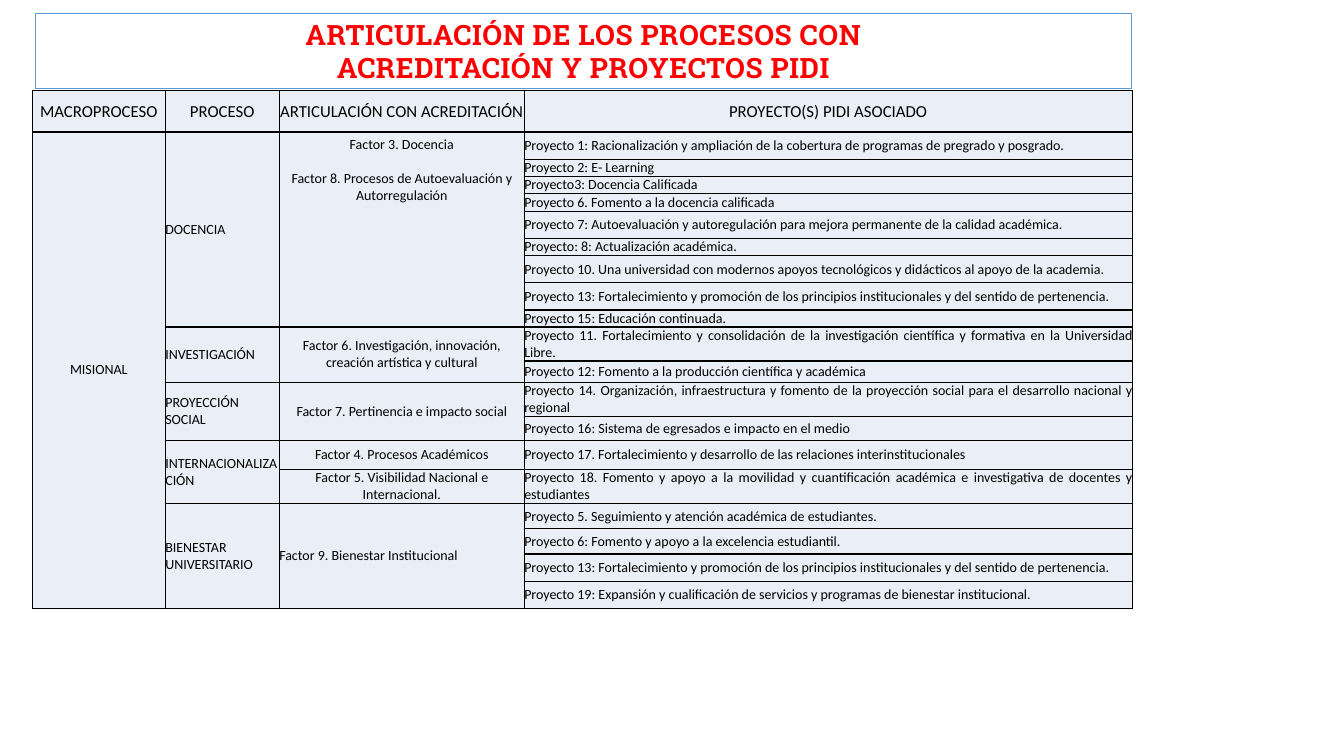
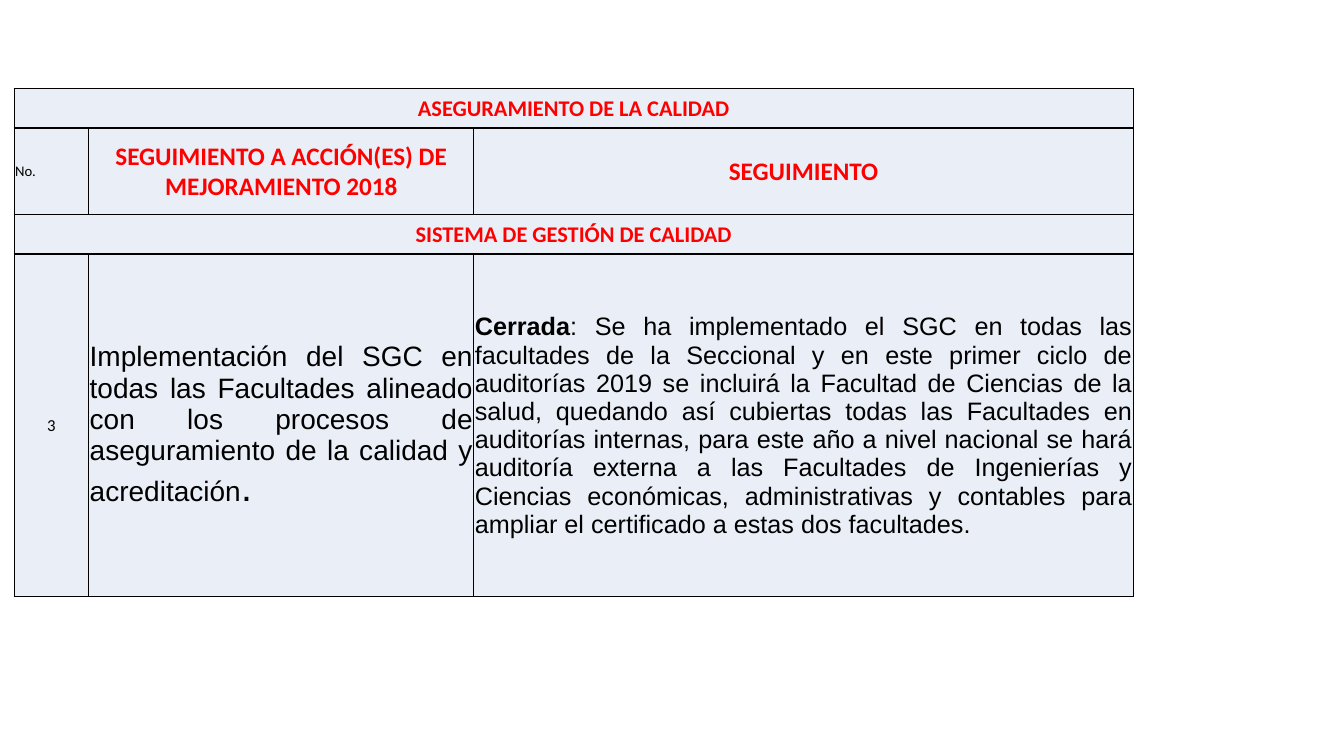
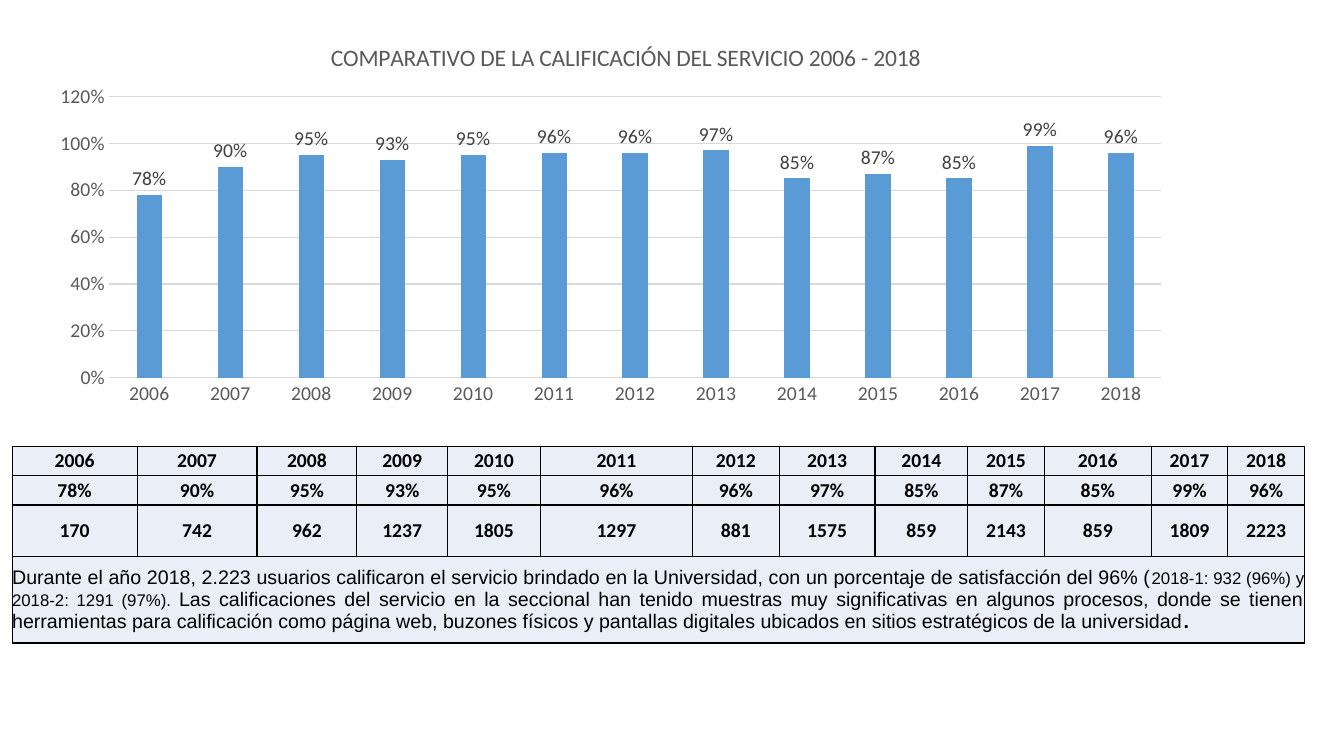
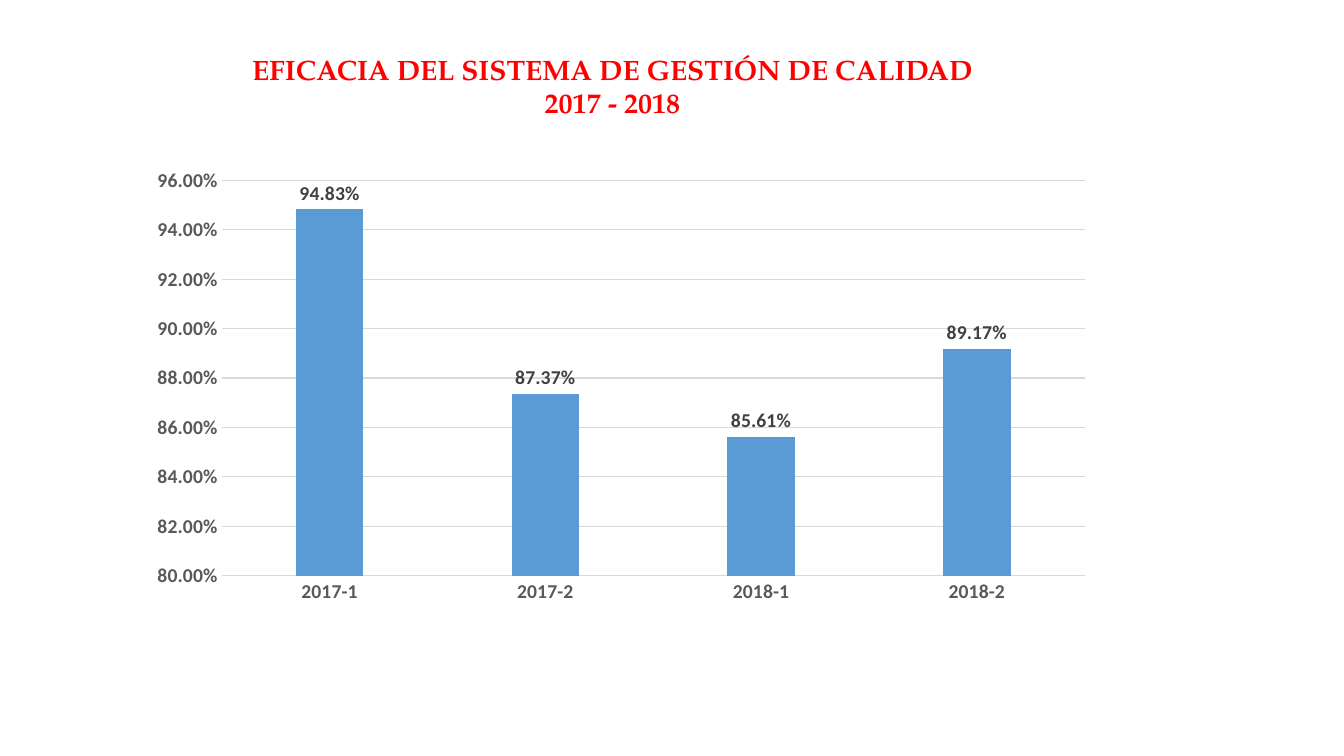
"""Build four slides on quality management: project tables and result charts."""
from lxml.etree import SubElement
from pptx import Presentation
from pptx.chart.data import CategoryChartData
from pptx.dml.color import RGBColor
from pptx.enum.chart import XL_CHART_TYPE, XL_LABEL_POSITION, XL_TICK_MARK
from pptx.enum.shapes import MSO_SHAPE
from pptx.enum.text import MSO_ANCHOR, PP_ALIGN
from pptx.oxml.ns import qn
from pptx.util import Inches, Pt

RED = RGBColor(0xFF, 0x00, 0x00)
BLACK = RGBColor(0x00, 0x00, 0x00)
BLUE = RGBColor(0x5B, 0x9B, 0xD5)
CELL_BLUE = RGBColor(0xEA, 0xEF, 0xF7)
GRID_GREY = RGBColor(0xD9, 0xD9, 0xD9)
AXIS_GREY = RGBColor(0x59, 0x59, 0x59)
LABEL_GREY = RGBColor(0x40, 0x40, 0x40)

LEFT, CENTER, JUSTIFY = PP_ALIGN.LEFT, PP_ALIGN.CENTER, PP_ALIGN.JUSTIFY
BODY_FONT = "Calibri"

PROCESS_TITLE = ["ARTICULACIÓN DE LOS PROCESOS CON", "ACREDITACIÓN Y PROYECTOS PIDI"]
PROCESS_HEADS = ["MACROPROCESO", "PROCESO", "ARTICULACIÓN CON ACREDITACIÓN", "PROYECTO(S) PIDI ASOCIADO"]
MACROPROCESS = "MISIONAL"
PROCESSES = [
    ("DOCENCIA", [
        (["Factor 3. Docencia", "Factor 8. Procesos de Autoevaluación y Autorregulación"], [
            "Proyecto 1: Racionalización y ampliación de la cobertura de programas de pregrado y posgrado.",
            "Proyecto 2: E- Learning",
            "Proyecto3: Docencia Calificada",
            "Proyecto 6. Fomento a la docencia calificada",
            "Proyecto 7: Autoevaluación y autoregulación para mejora permanente de la calidad académica.",
            "Proyecto: 8: Actualización académica.",
            "Proyecto 10. Una universidad con modernos apoyos tecnológicos y didácticos al apoyo de la academia.",
            "Proyecto 13: Fortalecimiento y promoción de los principios institucionales y del sentido de pertenencia.",
            "Proyecto 15: Educación continuada.",
        ]),
    ]),
    ("INVESTIGACIÓN", [
        (["Factor 6. Investigación, innovación, creación artística y cultural"], [
            "Proyecto 11. Fortalecimiento y consolidación de la investigación científica y formativa "
            "en la Universidad Libre.",
            "Proyecto 12: Fomento a la producción científica y académica",
        ]),
    ]),
    ("PROYECCIÓN SOCIAL", [
        (["Factor 7. Pertinencia e impacto social"], [
            "Proyecto 14. Organización, infraestructura y fomento de la proyección social "
            "para el desarrollo nacional y regional",
            "Proyecto 16: Sistema de egresados e impacto en el medio",
        ]),
    ]),
    ("INTERNACIONALIZACIÓN", [
        (["Factor 4. Procesos Académicos"], [
            "Proyecto 17. Fortalecimiento y desarrollo de las relaciones interinstitucionales",
        ]),
        (["Factor 5. Visibilidad Nacional e Internacional."], [
            "Proyecto 18. Fomento y apoyo a la movilidad y cuantificación académica e investigativa "
            "de docentes y estudiantes",
        ]),
    ]),
    ("BIENESTAR UNIVERSITARIO", [
        (["Factor 9. Bienestar Institucional"], [
            "Proyecto 5. Seguimiento y atención académica de estudiantes.",
            "Proyecto 6: Fomento y apoyo a la excelencia estudiantil.",
            "Proyecto 13: Fortalecimiento y promoción de los principios institucionales y del sentido de pertenencia.",
            "Proyecto 19: Expansión y cualificación de servicios y programas de bienestar institucional.",
        ]),
    ]),
]
PROCESS_COLS = [1.32, 1.13, 2.43, 6.03]
PROCESS_ROWS = [0.41, 0.27, 0.15, 0.15, 0.18, 0.27, 0.17, 0.27, 0.27, 0.16,
                0.27, 0.21, 0.29, 0.24, 0.29, 0.29, 0.25, 0.25, 0.27, 0.27]
LEFT_ALIGNED_FACTOR = "Factor 9. Bienestar Institucional"

FOLLOW_UP_BANDS = {0: "ASEGURAMIENTO DE LA CALIDAD", 2: "SISTEMA DE GESTIÓN DE CALIDAD"}
FOLLOW_UP_HEADS = ["SEGUIMIENTO A ACCIÓN(ES) DE MEJORAMIENTO 2018", "SEGUIMIENTO"]
ACTION = [
    ("Implementación del SGC en todas las Facultades alineado con los procesos de aseguramiento "
     "de la calidad y acreditación", {"size": 20, "font": "Arial"}),
    (".", {"size": 28, "font": "Arial"}),
]
ACTION_STATUS = [
    ("Cerrada", {"size": 18, "font": "Arial", "bold": True}),
    (": Se ha implementado el SGC en todas las facultades de la Seccional y en este primer ciclo de "
     "auditorías 2019 se incluirá la Facultad de Ciencias de la salud, quedando así cubiertas todas las "
     "Facultades en auditorías internas, para este año a nivel nacional se hará auditoría externa a las "
     "Facultades de Ingenierías y Ciencias económicas, administrativas y contables para ampliar el "
     "certificado a estas dos facultades.", {"size": 18, "font": "Arial"}),
]

SERVICE_TITLE = "COMPARATIVO DE LA CALIFICACIÓN DEL SERVICIO 2006 - 2018"
SERVICE_YEARS = [str(year) for year in range(2006, 2019)]
SERVICE_SCORES = [0.78, 0.9, 0.95, 0.93, 0.95, 0.96, 0.96, 0.97, 0.85, 0.87, 0.85, 0.99, 0.96]
SERVICE_USERS = [170, 742, 962, 1237, 1805, 1297, 881, 1575, 859, 2143, 859, 1809, 2223]
SERVICE_COLS = [1.24, 1.19, 0.99, 0.9, 0.92, 1.51, 0.86, 0.95, 0.92, 0.76, 1.06, 0.76, 0.76]
SERVICE_NOTE = [
    ("Durante el año 2018, 2.223 usuarios calificaron el servicio brindado en la Universidad, con un "
     "porcentaje de satisfacción del 96% (", {"size": 14, "font": "Arial"}),
    ("2018-1: 932 (96%) y 2018-2: 1291 (97%). ", {"size": 12, "font": "Arial"}),
    ("Las calificaciones del servicio en la seccional han tenido muestras muy significativas en algunos "
     "procesos, donde se tienen herramientas para calificación como página web, buzones físicos y pantallas "
     "digitales ubicados en sitios estratégicos de la universidad", {"size": 14, "font": "Arial"}),
    (".", {"size": 14, "font": "Arial", "bold": True}),
]

EFFICACY_TITLE = ["EFICACIA DEL SISTEMA DE GESTIÓN DE CALIDAD", "2017 - 2018"]
EFFICACY = {"2017-1": 0.9483, "2017-2": 0.8737, "2018-1": 0.8561, "2018-2": 0.8917}


def box(*lengths):
    return [Inches(length) for length in lengths]


def style_font(font, size, color=BLACK, bold=False, name=BODY_FONT):
    font.size, font.bold, font.name = Pt(size), bold, name
    font.color.rgb = color


def write_runs(paragraph, runs, align):
    paragraph.alignment = align
    for text, look in runs:
        run = paragraph.add_run()
        run.text = text
        style_font(run.font, look["size"], look.get("color", BLACK),
                   look.get("bold", False), look.get("font", BODY_FONT))


def write_lines(frame, lines, align=CENTER, gap=0, **look):
    for index, line in enumerate(lines):
        paragraph = frame.add_paragraph() if index else frame.paragraphs[0]
        if index and gap:
            paragraph.space_before = Pt(gap)
        write_runs(paragraph, [(line, look)], align)


def add_borders(cell):
    properties = cell._tc.get_or_add_tcPr()
    for side in ("a:lnL", "a:lnR", "a:lnT", "a:lnB"):
        border = SubElement(properties, qn(side), w=str(Pt(1)))
        fill = SubElement(border, qn("a:solidFill"))
        SubElement(fill, qn("a:srgbClr"), val=str(BLACK))


def add_grid(slide, left, top, cols, rows, margin=0):
    table = slide.shapes.add_table(len(rows), len(cols), *box(left, top, sum(cols), sum(rows))).table
    for column, width in zip(table.columns, cols):
        column.width = Inches(width)
    for row, height in zip(table.rows, rows):
        row.height = Inches(height)
    for cell in table.iter_cells():
        cell.margin_left = cell.margin_top = cell.margin_right = Inches(margin)
        cell.margin_bottom = 0
        cell.vertical_anchor = MSO_ANCHOR.MIDDLE
        add_borders(cell)
        cell.fill.solid()
        cell.fill.fore_color.rgb = CELL_BLUE
    return table


def span(table, row, col, height=1, width=1):
    cell = table.cell(row, col)
    if height * width > 1:
        cell.merge(table.cell(row + height - 1, col + width - 1))
    return cell


def place_in_chart(parent, index, inner=False, **fractions):
    layout = parent.find(qn("c:layout"))
    if layout is not None:
        parent.remove(layout)
    layout = parent.makeelement(qn("c:layout"))
    parent.insert(index, layout)
    manual = SubElement(layout, qn("c:manualLayout"))
    if inner:
        SubElement(manual, qn("c:layoutTarget"), val="inner")
    for mode in ("xMode", "yMode"):
        SubElement(manual, qn(f"c:{mode}"), val="edge")
    for name, fraction in fractions.items():
        SubElement(manual, qn(f"c:{name}"), val=str(fraction))


def add_columns(slide, area, categories, values, number_format, scale, bold=False):
    data = CategoryChartData(number_format=number_format)
    data.categories = categories
    data.add_series("Series 1", values)
    chart = slide.shapes.add_chart(XL_CHART_TYPE.COLUMN_CLUSTERED, *box(*area), data).chart
    style_font(chart.font, 14, bold=bold)
    chart.has_legend = chart.has_title = False

    for axis in (chart.category_axis, chart.value_axis):
        axis.major_tick_mark = axis.minor_tick_mark = XL_TICK_MARK.NONE
        style_font(axis.tick_labels.font, 14, AXIS_GREY, bold)
    value_axis = chart.value_axis
    value_axis.minimum_scale, value_axis.maximum_scale, value_axis.major_unit = scale
    value_axis.tick_labels.number_format = number_format
    value_axis.tick_labels.number_format_is_linked = False
    value_axis.format.line.fill.background()
    for line in (chart.category_axis.format.line, value_axis.major_gridlines.format.line):
        line.color.rgb = GRID_GREY
        line.width = Pt(0.75)

    plot = chart.plots[0]
    plot.gap_width, plot.overlap, plot.vary_by_categories = 219, -27, False
    plot.series[0].format.fill.solid()
    plot.series[0].format.fill.fore_color.rgb = BLUE
    plot.has_data_labels = True
    labels = plot.data_labels
    labels.show_value = True
    labels.position = XL_LABEL_POSITION.OUTSIDE_END
    labels.number_format = number_format
    labels.number_format_is_linked = False
    style_font(labels.font, 14, LABEL_GREY, bold)
    return chart


def build_processes(slide):
    title = slide.shapes.add_shape(MSO_SHAPE.RECTANGLE, *box(0.35, 0.13, 10.87, 0.75))
    title.shadow.inherit = False
    title.fill.background()
    title.line.color.rgb = BLUE
    title.line.width = Pt(0.75)
    frame = title.text_frame
    frame.word_wrap = True
    frame.margin_left, frame.margin_top, frame.margin_right, frame.margin_bottom = box(0.07, 0.04, 0.07, 0.04)
    write_lines(frame, PROCESS_TITLE, size=20, color=RED, bold=True, font="Roboto Slab")
    for paragraph in frame.paragraphs:
        for run in paragraph.runs:
            run.font._element.set("spc", "40")

    table = add_grid(slide, 0.32, 0.9, PROCESS_COLS, PROCESS_ROWS)
    for col, head in enumerate(PROCESS_HEADS):
        write_lines(table.cell(0, col).text_frame, [head], size=12)
    macroprocess = span(table, 1, 0, len(PROCESS_ROWS) - 1)
    write_lines(macroprocess.text_frame, [MACROPROCESS], size=10)
    row = 1
    for process, groups in PROCESSES:
        height = sum(len(projects) for _, projects in groups)
        write_lines(span(table, row, 1, height).text_frame, [process], LEFT, size=10)
        for factors, projects in groups:
            factor_cell = span(table, row, 2, len(projects))
            if len(factors) > 1:
                factor_cell.vertical_anchor = MSO_ANCHOR.TOP
                factor_cell.margin_top = Inches(0.04)
            align = LEFT if LEFT_ALIGNED_FACTOR in factors else CENTER
            write_lines(factor_cell.text_frame, factors, align, gap=12, size=10)
            for project in projects:
                write_lines(table.cell(row, 3).text_frame, [project], JUSTIFY, size=10)
                row += 1


def build_follow_up(slide):
    table = add_grid(slide, 0.14, 0.88, [0.74, 3.82, 6.54], [0.39, 0.86, 0.39, 3.4], 0.01)
    for row, band in FOLLOW_UP_BANDS.items():
        write_lines(span(table, row, 0, width=3).text_frame, [band], size=16, color=RED, bold=True)
    write_lines(table.cell(1, 0).text_frame, ["No."], JUSTIFY, size=10.5)
    for col, head in enumerate(FOLLOW_UP_HEADS, 1):
        write_lines(table.cell(1, col).text_frame, [head], size=18, color=RED, bold=True)
    write_lines(table.cell(3, 0).text_frame, ["3"], size=12)
    for col, runs in enumerate([ACTION, ACTION_STATUS], 1):
        write_runs(table.cell(3, col).text_frame.paragraphs[0], runs, JUSTIFY)


def build_service(slide):
    table = add_grid(slide, 0.12, 4.43, SERVICE_COLS, [0.29, 0.29, 0.51, 0.86])
    for col, record in enumerate(zip(SERVICE_YEARS, SERVICE_SCORES, SERVICE_USERS)):
        year, score, users = record
        for row, text in enumerate([year, f"{score:.0%}", str(users)]):
            write_lines(table.cell(row, col).text_frame, [text], size=14, bold=True)
    note = span(table, 3, 0, width=len(SERVICE_COLS))
    write_runs(note.text_frame.paragraphs[0], SERVICE_NOTE, JUSTIFY)

    chart = add_columns(slide, (0.12, 0.18, 12, 3.88), SERVICE_YEARS, SERVICE_SCORES, "0%", (0, 1.2, 0.2))
    write_lines(chart.chart_title.text_frame, [SERVICE_TITLE], size=16.8, color=AXIS_GREY)
    place_in_chart(chart.element.find(".//" + qn("c:title")), 1, x=0.26, y=0.05)
    place_in_chart(chart.element.find(".//" + qn("c:plotArea")), 0, inner=True, x=0.08, y=0.2, w=0.87, h=0.72)


def build_efficacy(slide):
    frame = slide.shapes.add_textbox(*box(2.33, 0.47, 7.49, 1.11)).text_frame
    frame.word_wrap = False
    write_lines(frame, EFFICACY_TITLE, size=20, color=RED, bold=True, font="TeX Gyre Pagella")
    add_columns(slide, (1.37, 1.58, 9.58, 4.5), list(EFFICACY), list(EFFICACY.values()),
                "0.00%", (0.8, 0.96, 0.02), bold=True)


def main():
    deck = Presentation()
    deck.slide_width, deck.slide_height = box(13.33, 7.5)
    for build in (build_processes, build_follow_up, build_service, build_efficacy):
        build(deck.slides.add_slide(deck.slide_layouts[6]))
    deck.save("out.pptx")


if __name__ == "__main__":
    main()
